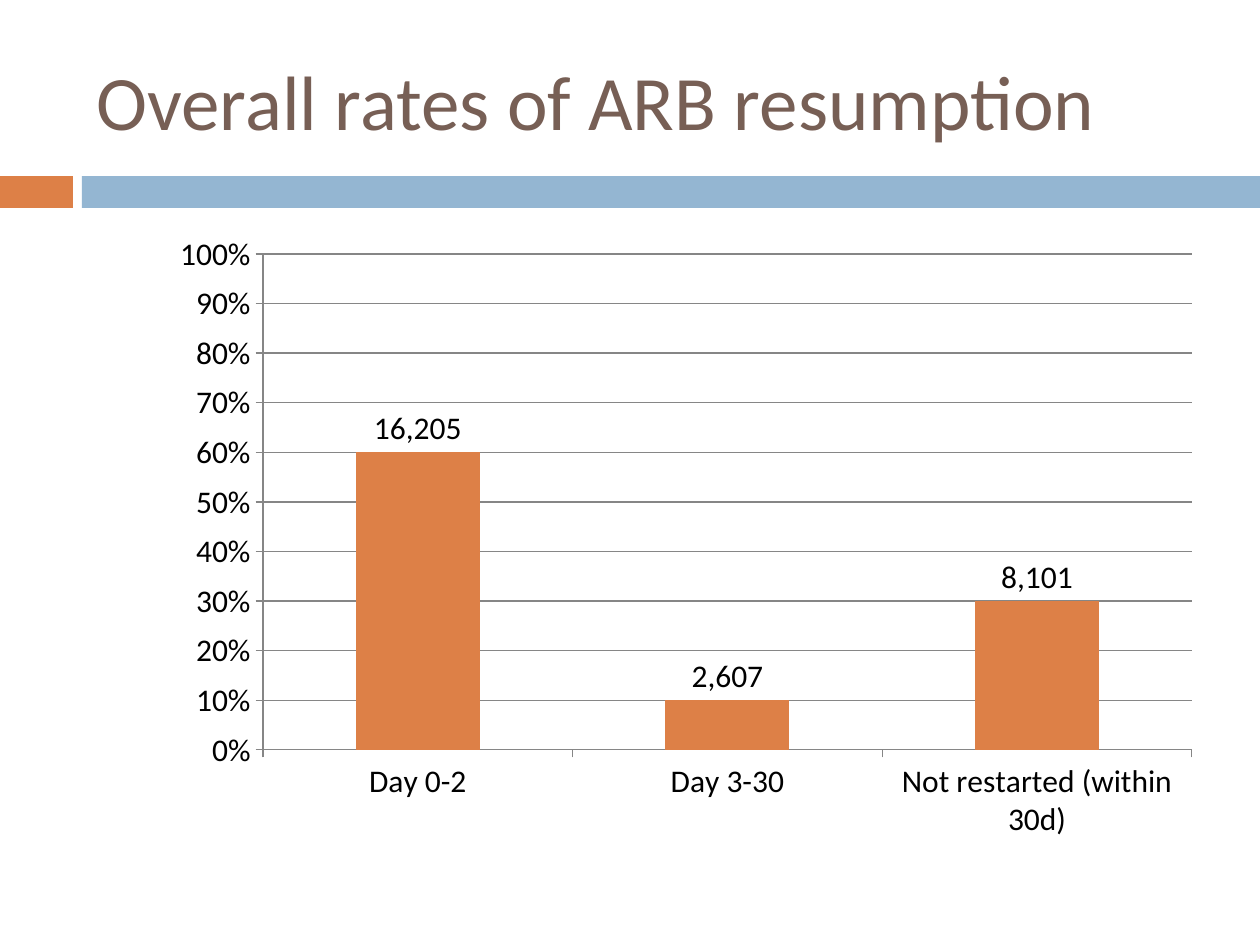
from lxml import etree
from pptx import Presentation
from pptx.chart.data import CategoryChartData
from pptx.dml.color import RGBColor
from pptx.enum.chart import XL_CHART_TYPE, XL_LABEL_POSITION, XL_TICK_MARK
from pptx.enum.shapes import MSO_SHAPE
from pptx.enum.text import MSO_ANCHOR, PP_ALIGN
from pptx.oxml.ns import qn
from pptx.util import Pt

COLUMN = XL_CHART_TYPE.COLUMN_CLUSTERED
OUTSIDE_END = XL_LABEL_POSITION.OUTSIDE_END
OUTSIDE = XL_TICK_MARK.OUTSIDE
RECTANGLE = MSO_SHAPE.RECTANGLE
MIDDLE = MSO_ANCHOR.MIDDLE
LEFT = PP_ALIGN.LEFT

FONT = "Calibri"
COLORS = {"orange": "DD8047", "blue": "94B6D2", "brown": "775F55",
          "black": "000000", "grid": "868686"}
SCALE = 914400 / 126


def px(*lengths):
    return [round(length * SCALE) for length in lengths]


def style_font(font, size, color):
    font.name = FONT
    font.size = Pt(size)
    font.bold = False
    font.color.rgb = RGBColor.from_string(COLORS[color])


deck = Presentation()
deck.slide_width, deck.slide_height = px(1260, 945)
page = deck.slides.add_slide(deck.slide_layouts[5])

for left, width, color in [(0, 73, "orange"), (82, 1178, "blue")]:
    band = page.shapes.add_shape(RECTANGLE, *px(left, 176, width, 32))
    band.shadow.inherit = False
    band.fill.solid()
    band.fill.fore_color.rgb = RGBColor.from_string(COLORS[color])
    band.line.fill.background()

title = page.shapes.title
title.left, title.top, title.width, title.height = px(84, 32, 1124, 136)
title.text_frame.text = "Overall rates of ARB resumption"
title.text_frame.vertical_anchor = MIDDLE
para = title.text_frame.paragraphs[0]
para.alignment = LEFT
style_font(para.runs[0].font, 44, "brown")

counts = {"Day 0-2": 16205, "Day 3-30": 2607, "Not restarted (within 30d)": 8101}
total = sum(counts.values())
data = CategoryChartData(number_format="0%")
data.categories = list(counts)
data.add_series("Series 1", [round(count / total, 2) for count in counts.values()])

chart_width, chart_height = 1124, 620
chart = page.shapes.add_chart(COLUMN, *px(84, 221, chart_width, chart_height), data).chart
chart.has_legend = False
chart.has_title = False
style_font(chart.font, 18, "black")

plot = chart.plots[0]
plot.gap_width = 150
plot.vary_by_categories = False
plot.has_data_labels = True
labels = plot.data_labels
labels.show_value = True
labels.number_format = "0.00%"
labels.number_format_is_linked = False
labels.position = OUTSIDE_END

series = plot.series[0]
series.format.fill.solid()
series.format.fill.fore_color.rgb = RGBColor.from_string(COLORS["orange"])
for index, count in enumerate(counts.values()):
    label = series.points[index].data_label
    label.text_frame.text = f"{count:,}"
    style_font(label.text_frame.paragraphs[0].runs[0].font, 18, "black")
    label.position = OUTSIDE_END

rates = chart.value_axis
rates.minimum_scale = 0
rates.maximum_scale = 1
rates.major_unit = 0.1
rates.tick_labels.number_format = "0%"
rates.tick_labels.number_format_is_linked = False
rates.has_major_gridlines = True
for axis in (rates, chart.category_axis):
    axis.major_tick_mark = OUTSIDE
for lined in (rates, chart.category_axis, rates.major_gridlines):
    lined.format.line.width = Pt(0.75)
    lined.format.line.color.rgb = RGBColor.from_string(COLORS["grid"])

plot_area = chart.element.find(".//" + qn("c:plotArea"))
for old in plot_area.findall(qn("c:layout")):
    plot_area.remove(old)
layout = etree.Element(qn("c:layout"))
manual = etree.SubElement(layout, qn("c:manualLayout"))
for tag, value in [("layoutTarget", "inner"), ("xMode", "edge"), ("yMode", "edge"),
                   ("x", 179 / chart_width), ("y", 33 / chart_height),
                   ("w", 929 / chart_width), ("h", 496 / chart_height)]:
    etree.SubElement(manual, qn("c:" + tag)).set("val", str(value))
plot_area.insert(0, layout)

deck.save("out.pptx")
